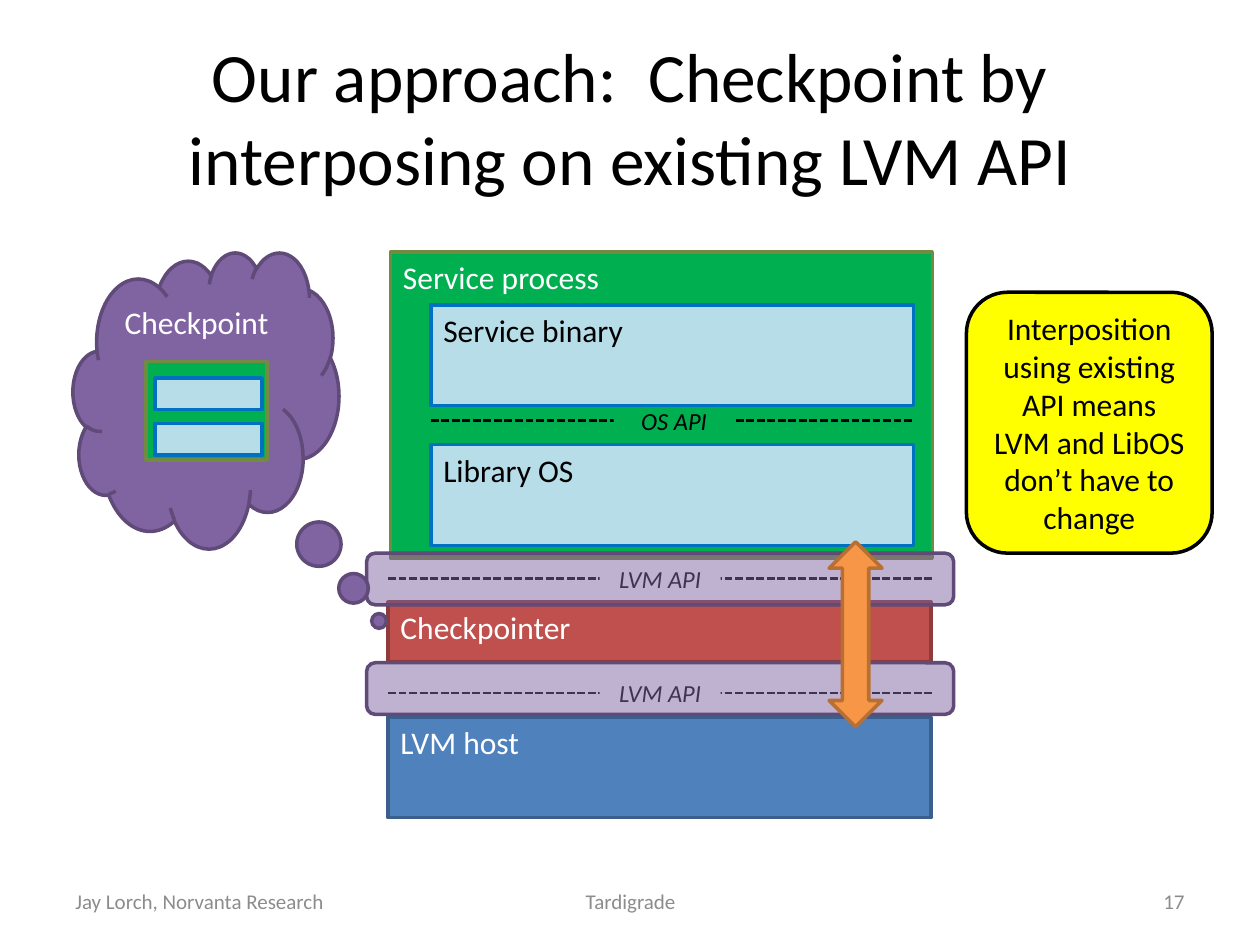
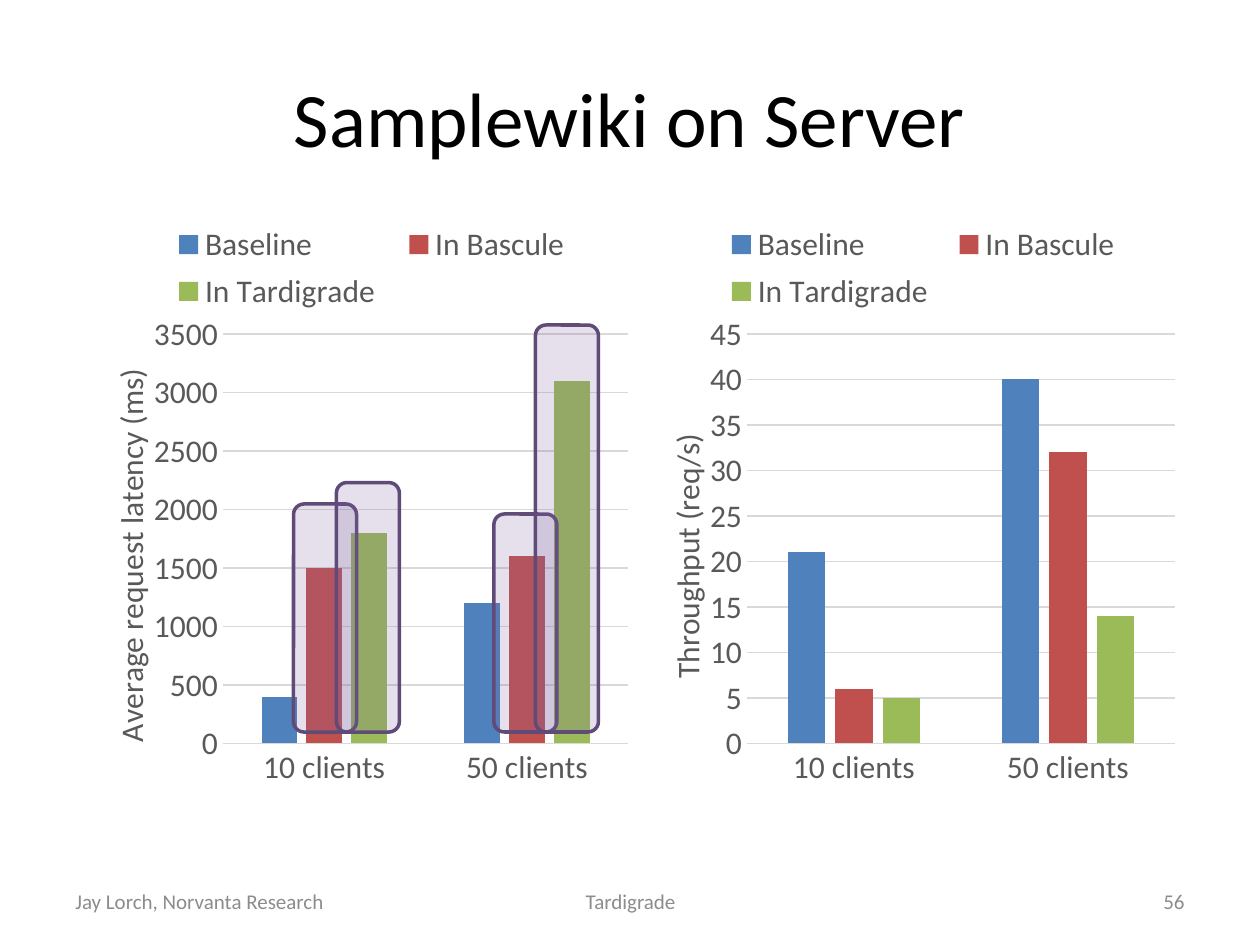
from lxml.etree import SubElement
from pptx import Presentation
from pptx.chart.data import CategoryChartData
from pptx.dml.color import RGBColor
from pptx.enum.chart import XL_CHART_TYPE, XL_LEGEND_POSITION, XL_TICK_MARK
from pptx.enum.dml import MSO_LINE
from pptx.enum.shapes import MSO_CONNECTOR, MSO_SHAPE
from pptx.enum.text import MSO_ANCHOR, PP_ALIGN
from pptx.oxml.ns import qn
from pptx.util import Inches, Pt

SLIDE_WIDTH, SLIDE_HEIGHT = Inches(10), Inches(7.5)
CELL = SLIDE_WIDTH / 10
FONT = "Calibri"

BLACK = RGBColor(0x00, 0x00, 0x00)
WHITE = RGBColor(0xFF, 0xFF, 0xFF)
FOOTER_GRAY = RGBColor(0x8C, 0x8C, 0x8C)
CHART_TEXT = RGBColor(0x59, 0x59, 0x59)
GRID_GRAY = RGBColor(0xD9, 0xD9, 0xD9)
PROCESS_GREEN = RGBColor(0x00, 0xB0, 0x50)
PROCESS_EDGE = RGBColor(0x73, 0x8A, 0x42)
PART_BLUE = RGBColor(0xB7, 0xDE, 0xE8)
PART_EDGE = RGBColor(0x00, 0x70, 0xC0)
RED = RGBColor(0xC0, 0x50, 0x4D)
RED_EDGE = RGBColor(0x8E, 0x3B, 0x39)
BLUE = RGBColor(0x4F, 0x81, 0xBD)
BLUE_EDGE = RGBColor(0x3A, 0x5F, 0x8C)
PURPLE = RGBColor(0x80, 0x64, 0xA2)
PURPLE_EDGE = RGBColor(0x5F, 0x4A, 0x78)
ORANGE = RGBColor(0xF7, 0x96, 0x46)
ORANGE_EDGE = RGBColor(0xB7, 0x6F, 0x34)
GREEN = RGBColor(0x9B, 0xBB, 0x59)
YELLOW = RGBColor(0xFF, 0xFF, 0x00)

STACK_LEFT, STACK_WIDTH = 3.08, 4.31
PART_LEFT, PART_WIDTH = 3.42, 3.83
HIGHLIGHT_BOTTOM, HIGHLIGHT_WIDTH = 5.81, 0.5
CLIENT_LOADS = ("10 clients", "50 clients")
SERIES_COLORS = {"Baseline": BLUE, "In Bascule": RED, "In Tardigrade": GREEN}


def grid(*cells):
    """Turn grid columns and rows into slide lengths."""
    return [round(cell * CELL) for cell in cells]


def set_font(font, size, color):
    """Give a font the shared face with a size and a colour."""
    font.name, font.size, font.bold = FONT, Pt(size), False
    font.color.rgb = color


def write(frame, text, size=18, color=BLACK, align=PP_ALIGN.LEFT,
          anchor=MSO_ANCHOR.TOP, italic=False):
    """Put one formatted paragraph into a text frame."""
    frame.word_wrap = True
    frame.vertical_anchor = anchor
    paragraph = frame.paragraphs[0]
    paragraph.alignment = align
    run = paragraph.add_run()
    run.text = text
    set_font(run.font, size, color)
    run.font.italic = italic


def add_block(shapes, area, fill, edge=None, kind=MSO_SHAPE.RECTANGLE,
              opacity=None, text=None, **text_format):
    """Draw a filled preset shape, optionally outlined, translucent or labelled."""
    block = shapes.add_shape(kind, *grid(*area))
    block.shadow.inherit = False
    block.fill.solid()
    block.fill.fore_color.rgb = fill
    if opacity:
        color = block._element.spPr.find(qn("a:solidFill"))[0]
        SubElement(color, qn("a:alpha"), val=str(opacity * 1000))
    if edge is None:
        block.line.fill.background()
    else:
        block.line.color.rgb = edge
        block.line.width = Pt(2)
    if text:
        write(block.text_frame, text, **text_format)
    return block


def add_api_boundary(shapes, name, left, right, row, name_left, backdrop):
    """Draw a dashed boundary with the API's name interrupting it."""
    boundary = shapes.add_connector(MSO_CONNECTOR.STRAIGHT, *grid(left, row, right, row))
    boundary.line.color.rgb = BLACK
    boundary.line.width = Pt(1.5)
    boundary.line.dash_style = MSO_LINE.SQUARE_DOT
    SubElement(boundary._element.spPr, qn("a:effectLst"))
    label = add_block(shapes, (name_left, row - 0.08, 0.96, 0.16), backdrop, text=name,
                      size=14, italic=True, align=PP_ALIGN.CENTER,
                      anchor=MSO_ANCHOR.MIDDLE)
    label.text_frame.margin_top = label.text_frame.margin_bottom = 0


def add_titled_slide(deck, title, number, title_size):
    """Add a slide with its title and the shared footer."""
    slide = deck.slides.add_slide(deck.slide_layouts[5])
    heading = slide.shapes.title
    heading.left, heading.top, heading.width, heading.height = grid(0.5, 0.3, 9, 1.25)
    write(heading.text_frame, title, size=title_size, align=PP_ALIGN.CENTER,
          anchor=MSO_ANCHOR.MIDDLE)
    footer = (
        (0.5, 2.33, "Jay Lorch, Norvanta Research", PP_ALIGN.LEFT),
        (3.42, 3.17, "Tardigrade", PP_ALIGN.CENTER),
        (7.17, 2.33, number, PP_ALIGN.RIGHT),
    )
    for left, width, text, align in footer:
        note = slide.shapes.add_textbox(*grid(left, 6.95, width, 0.4))
        write(note.text_frame, text, size=12, color=FOOTER_GRAY, align=align,
              anchor=MSO_ANCHOR.MIDDLE)
    return slide


def set_layout(element, inner=False, **shares):
    """Place a chart part by shares (x, y, w, h) of the chart's size."""
    layout = element.find(qn("c:layout"))
    if layout is None:
        layout = SubElement(element, qn("c:layout"))
        element.insert(0, layout)
    manual = SubElement(layout, qn("c:manualLayout"))
    if inner:
        SubElement(manual, qn("c:layoutTarget"), val="inner")
    for side in ("x", "y"):
        SubElement(manual, qn(f"c:{side}Mode"), val="edge")
    for side, share in shares.items():
        SubElement(manual, qn(f"c:{side}"), val=str(share))


def add_load_chart(slide, area, measure, values, top, step, plot_x, plot_w, measure_y):
    """Add a clustered column chart of one measure for each client load."""
    data = CategoryChartData()
    data.categories = CLIENT_LOADS
    for name, loads in zip(SERIES_COLORS, values):
        data.add_series(name, loads)
    chart = slide.shapes.add_chart(
        XL_CHART_TYPE.COLUMN_CLUSTERED, *grid(*area), data).chart
    set_font(chart.font, 18, CHART_TEXT)
    chart.has_title = False
    chart.has_legend = True
    chart.legend.position = XL_LEGEND_POSITION.TOP
    chart.legend.include_in_layout = False
    set_font(chart.legend.font, 18, CHART_TEXT)
    set_layout(chart.legend._element, x=0.16, y=0.03, w=0.75, h=0.17)

    plot = chart.plots[0]
    plot.gap_width, plot.overlap, plot.vary_by_categories = 219, -27, False
    for series, color in zip(plot.series, SERIES_COLORS.values()):
        series.format.fill.solid()
        series.format.fill.fore_color.rgb = color
    set_layout(chart._chartSpace.chart.plotArea, inner=True,
               x=plot_x, y=0.225, w=plot_w, h=0.683)

    for axis in (chart.category_axis, chart.value_axis):
        axis.major_tick_mark = axis.minor_tick_mark = XL_TICK_MARK.NONE
        set_font(axis.tick_labels.font, 18, CHART_TEXT)
    loads_axis, measure_axis = chart.category_axis, chart.value_axis
    measure_axis.minimum_scale, measure_axis.maximum_scale = 0, top
    measure_axis.major_unit = step
    measure_axis.format.line.fill.background()
    for line in (loads_axis.format.line, measure_axis.major_gridlines.format.line):
        line.color.rgb = GRID_GRAY
        line.width = Pt(0.75)
    caption = measure_axis.axis_title
    write(caption.text_frame, measure, color=CHART_TEXT, align=PP_ALIGN.CENTER)
    caption.text_frame._txBody.bodyPr.set("rot", "-5400000")
    caption.text_frame._txBody.bodyPr.set("vert", "horz")
    set_layout(caption._element, x=0.07, y=measure_y)


def add_checkpoint_cloud(shapes):
    """Draw the thought cloud holding a small copy of the service process."""
    cloud = add_block(shapes, (0.58, 2, 2.11, 2.35), PURPLE, PURPLE_EDGE,
                      kind=MSO_SHAPE.CLOUD_CALLOUT, text="Checkpoint", color=WHITE,
                      align=PP_ALIGN.CENTER)
    cloud.adjustments[0], cloud.adjustments[1] = 0.651, 0.746
    saved_process = shapes.add_group_shape().shapes
    add_block(saved_process, (1.16, 2.87, 0.96, 0.78), PROCESS_GREEN, PROCESS_EDGE)
    for row in (3, 3.36):
        add_block(saved_process, (1.23, row, 0.85, 0.25), PART_BLUE, PART_EDGE)


def build_approach(deck):
    """Build the slide on interposing at the LVM API."""
    slide = add_titled_slide(
        deck, "Our approach:  Checkpoint by interposing on existing LVM API", "17", 39.6)
    shapes = slide.shapes
    add_block(shapes, (3.1, 2, 4.3, 2.43), PROCESS_GREEN, PROCESS_EDGE,
              text="Service process", color=WHITE)
    for part, row in (("Service binary", 2.42), ("Library OS", 3.53)):
        add_block(shapes, (PART_LEFT, row, PART_WIDTH, 0.8), PART_BLUE, PART_EDGE, text=part)
    add_api_boundary(shapes, "OS API", PART_LEFT, PART_LEFT + PART_WIDTH, 3.34, 4.87,
                     PROCESS_GREEN)
    layers = (
        ("Checkpointer", 4.59, 0.47, RED, RED_EDGE),
        ("LVM host", 5.5, 0.8, BLUE, BLUE_EDGE),
    )
    for layer, api_row, height, fill, edge in layers:
        add_api_boundary(shapes, "LVM API", STACK_LEFT, 7.4, api_row, 4.76, WHITE)
        add_block(shapes, (STACK_LEFT, api_row + 0.19, STACK_WIDTH, height), fill, edge,
                  text=layer, color=WHITE)
    for row in (4.39, 5.26):
        add_block(shapes, (2.91, row, 4.66, 0.41), PURPLE, PURPLE_EDGE,
                  kind=MSO_SHAPE.ROUNDED_RECTANGLE, opacity=50)
    add_block(shapes, (6.58, 4.3, 0.42, 1.47), ORANGE, ORANGE_EDGE,
              kind=MSO_SHAPE.UP_DOWN_ARROW)
    add_checkpoint_cloud(shapes)
    add_block(shapes, (7.67, 2.32, 1.95, 2.07), YELLOW, BLACK,
              kind=MSO_SHAPE.ROUNDED_RECTANGLE,
              text="Interposition using existing API means LVM and LibOS don’t have to change",
              align=PP_ALIGN.CENTER, anchor=MSO_ANCHOR.MIDDLE)


def build_results(deck):
    """Build the slide of latency and throughput results."""
    slide = add_titled_slide(deck, "Samplewiki on Server", "56", 44)
    add_load_chart(slide, (0.5, 1.58, 4.58, 4.76), "Average request latency (ms)",
                   ((400, 1200), (1500, 1600), (1800, 3100)), top=3500, step=500,
                   plot_x=0.277, plot_w=0.703, measure_y=0.273)
    add_load_chart(slide, (4.92, 1.58, 4.5, 4.76), "Throughput (req/s)",
                   ((21, 40), (6, 32), (5, 14)), top=45, step=5,
                   plot_x=0.224, plot_w=0.755, measure_y=0.382)
    for left, height in ((2.33, 1.81), (2.67, 1.98), (3.92, 1.73), (4.25, 3.23)):
        add_block(slide.shapes, (left, HIGHLIGHT_BOTTOM - height, HIGHLIGHT_WIDTH, height),
                  PURPLE, PURPLE_EDGE, kind=MSO_SHAPE.ROUNDED_RECTANGLE, opacity=20)


def main():
    """Build and save the deck."""
    deck = Presentation()
    deck.slide_width, deck.slide_height = SLIDE_WIDTH, SLIDE_HEIGHT
    build_approach(deck)
    build_results(deck)
    deck.save("out.pptx")


if __name__ == "__main__":
    main()
